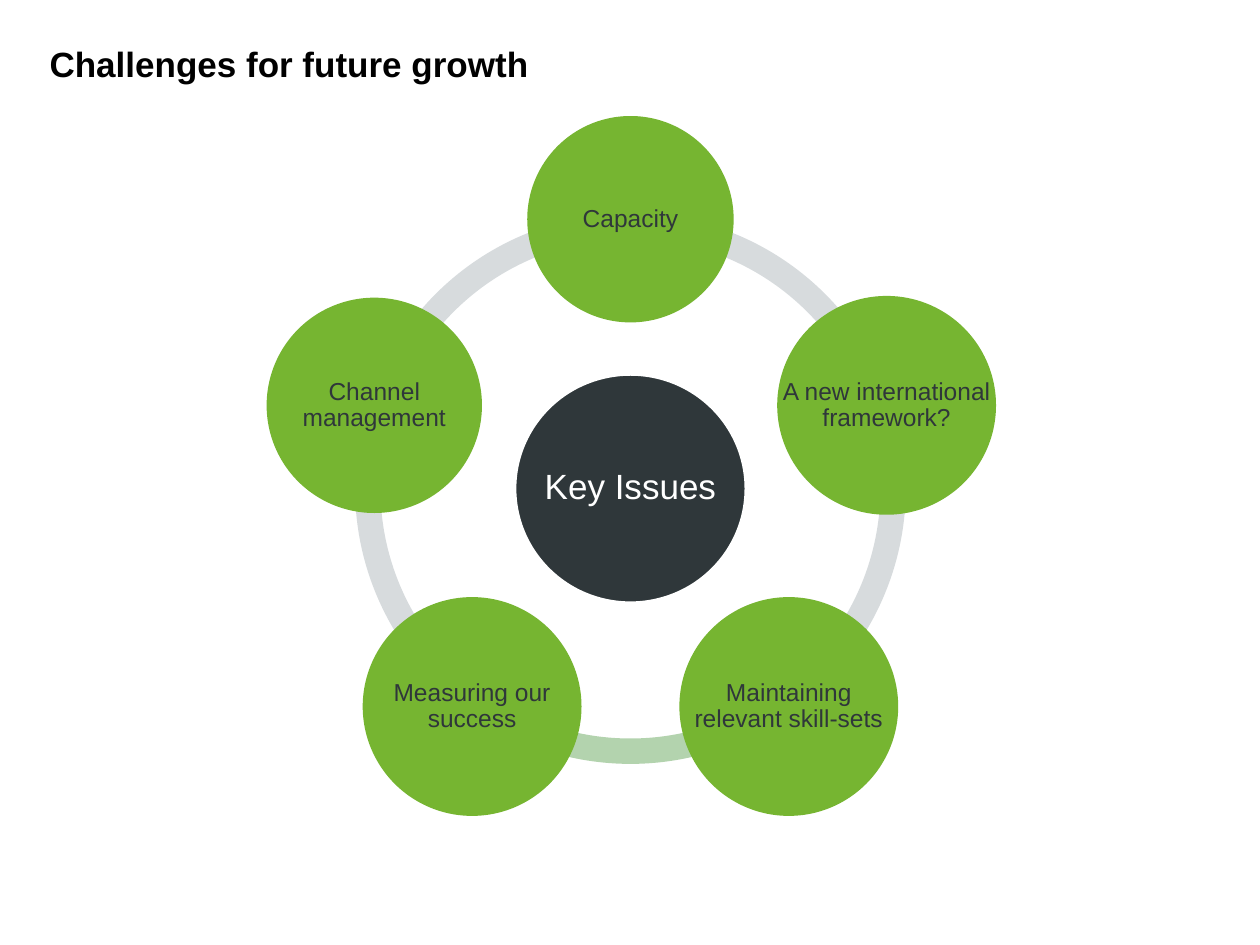
from math import cos, sin, radians
from pptx import Presentation
from pptx.dml.color import RGBColor as RGB
from pptx.enum.shapes import MSO_SHAPE as Kind
from pptx.enum.text import MSO_ANCHOR as Anchor, PP_ALIGN as Align
from pptx.util import Cm, Pt

BLACK = RGB(0x00, 0x00, 0x00)
WHITE = RGB(0xFF, 0xFF, 0xFF)
DARK = RGB(0x2F, 0x37, 0x3A)
GREEN = RGB(0x76, 0xB5, 0x31)
GREY = RGB(0xD7, 0xDB, 0xDD)
PALE = RGB(0xB3, 0xD3, 0xAE)

MID_X, MID_Y = 12.71, 9.85
ORBIT = 5.43
RING = 11.1
STEP = 72
ISSUES = [
    ("Capacity", 4.09),
    ("A new international framework?", 4.34),
    ("Maintaining relevant skill-sets", 4.34),
    ("Measuring our success", 4.34),
    ("Channel management", 4.27),
]
ARCS = [GREY, GREY, PALE, GREY, GREY]


def box(x, y, wide, high):
    return Cm(x - wide / 2), Cm(y - high / 2), Cm(wide), Cm(high)


def add_text(slide, area, text, size, color, inset=0, bold=False):
    frame = slide.shapes.add_textbox(*area).text_frame
    frame.word_wrap = True
    frame.margin_left = frame.margin_right = Cm(inset)
    frame.margin_top = frame.margin_bottom = Cm(inset)
    frame.text = text
    para = frame.paragraphs[0]
    font = para.runs[0].font
    font.name, font.size, font.bold = "Arial", Pt(size), bold
    font.color.rgb = color
    return frame, para


def add_title(slide, text):
    area = Cm(1), Cm(0.85), Cm(23.4), Cm(0.86)
    para = add_text(slide, area, text, 20, BLACK, bold=True)[1]
    para.space_after = Pt(4)


def add_arc(slide, start, color):
    area = box(MID_X, MID_Y, RING, RING)
    arc = slide.shapes.add_shape(Kind.BLOCK_ARC, *area)
    arc.shadow.inherit = False
    for i, angle in enumerate((start, start + STEP)):
        arc.adjustments[i] = angle % 360 * 0.6
    arc.adjustments[2] = 0.046
    arc.fill.solid()
    arc.fill.fore_color.rgb = color
    arc.line.fill.background()


def add_disc(slide, area, text, fill, edge, size, color):
    disc = slide.shapes.add_shape(Kind.OVAL, *area)
    disc.shadow.inherit = False
    disc.fill.solid()
    disc.fill.fore_color.rgb = fill
    disc.line.color.rgb = edge
    disc.line.width = Pt(2)
    frame, para = add_text(slide, area, text, size, color, inset=0.05)
    frame.vertical_anchor = Anchor.MIDDLE
    para.alignment = Align.CENTER
    para.line_spacing = 0.9
    para.space_after = Pt(size * 0.35)


def main():
    deck = Presentation()
    deck.slide_width, deck.slide_height = Cm(25.4), Cm(19.05)
    slide = deck.slides.add_slide(deck.slide_layouts[6])
    add_title(slide, "Challenges for future growth")
    for i, color in enumerate(ARCS):
        add_arc(slide, 270 + i * STEP, color)
    hub = box(MID_X, MID_Y, 4.67, 4.62)
    add_disc(slide, hub, "Key Issues", DARK, WHITE, 20, WHITE)
    for i, (text, wide) in enumerate(ISSUES):
        turn = radians(270 + i * STEP)
        x, y = MID_X + ORBIT * cos(turn), MID_Y + ORBIT * sin(turn)
        area = box(x, y, wide, wide)
        add_disc(slide, area, text, GREEN, GREEN, 14, DARK)
    deck.save("out.pptx")


if __name__ == "__main__":
    main()
